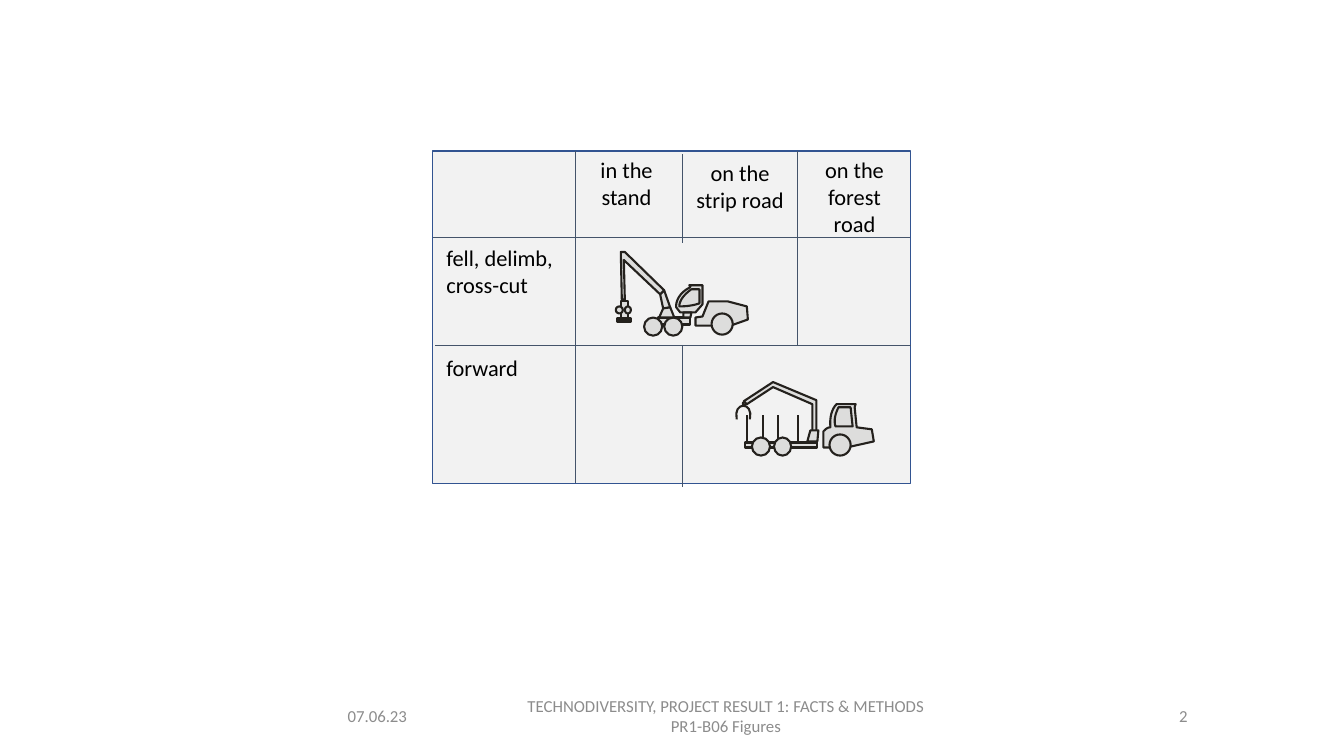
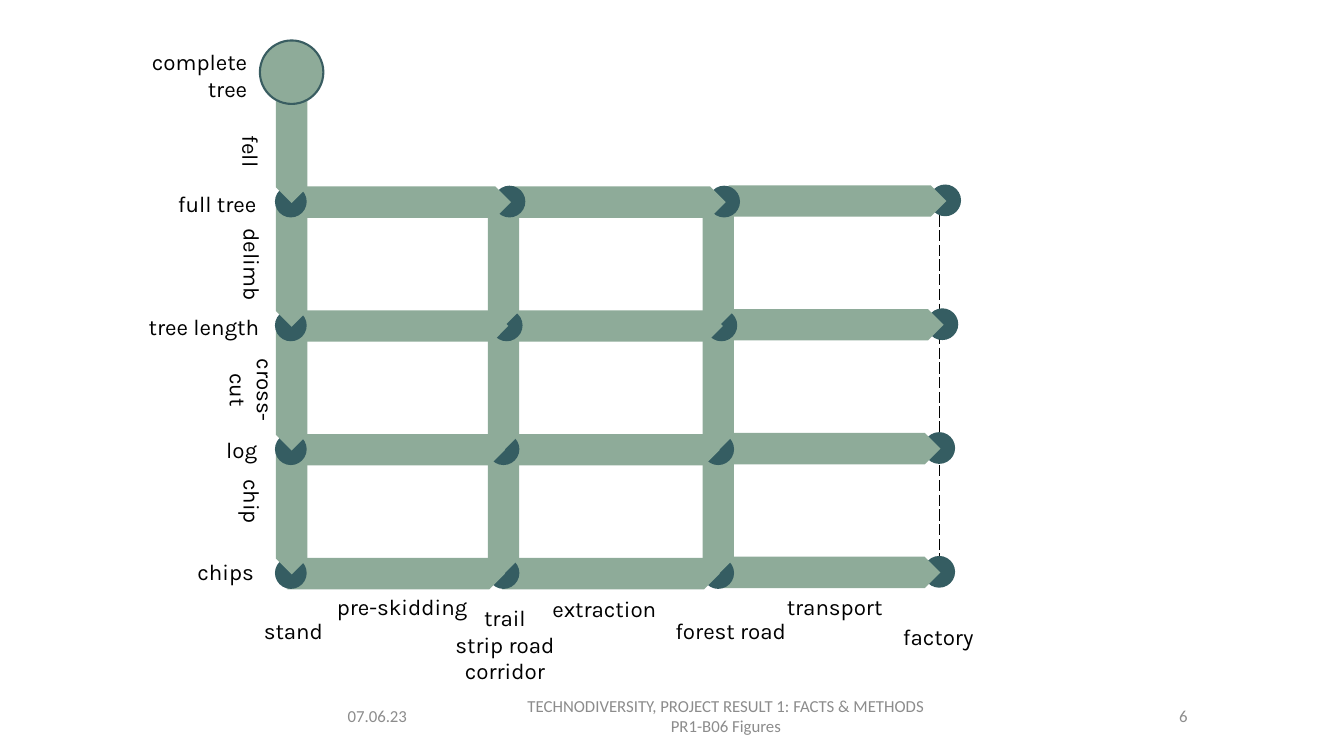
from lxml import etree
from pptx import Presentation
from pptx import util as u
from pptx.dml.color import RGBColor
from pptx.enum import shapes, text
from pptx.oxml.ns import qn

BLACK = RGBColor(0x00, 0x00, 0x00)
FOOTER_GREY = RGBColor(0x8C, 0x8C, 0x8C)
PANEL = RGBColor(0xF2, 0xF2, 0xF2)
PANEL_EDGE = RGBColor(0x32, 0x54, 0x91)
RULE = RGBColor(0x44, 0x54, 0x6A)
MACHINE = RGBColor(0xDD, 0xDD, 0xDC)
MACHINE_EDGE = RGBColor(0x24, 0x21, 0x1D)
SAGE = RGBColor(0x8E, 0xAB, 0x99)
TEAL = RGBColor(0x35, 0x5D, 0x62)
TREE_EDGE = RGBColor(0x39, 0x5D, 0x61)

RECT = shapes.MSO_SHAPE.RECTANGLE
OVAL = shapes.MSO_SHAPE.OVAL
ARROW = shapes.MSO_SHAPE.PENTAGON
STRAIGHT = shapes.MSO_CONNECTOR.STRAIGHT
LEFT, CENTER, RIGHT = text.PP_ALIGN.LEFT, text.PP_ALIGN.CENTER, text.PP_ALIGN.RIGHT


def write(slide, words, left, top, width, height, font="Calibri", size=16,
          color=BLACK, align=CENTER, anchor=text.MSO_ANCHOR.TOP, rotation=0):
    box = slide.shapes.add_textbox(u.Cm(left), u.Cm(top), u.Cm(width), u.Cm(height))
    box.rotation = rotation
    frame = box.text_frame
    frame.word_wrap = True
    frame.vertical_anchor = anchor
    frame.text = words
    for paragraph in frame.paragraphs:
        paragraph.alignment = align
        paragraph.font.name = font
        paragraph.font.size = u.Pt(size)
        paragraph.font.color.rgb = color


def paint(part, fill=None, line=None, weight=1.5):
    if fill:
        part.fill.solid()
        part.fill.fore_color.rgb = fill
    elif hasattr(part, "fill"):
        part.fill.background()
    if line:
        part.line.color.rgb = line
        part.line.width = u.Pt(weight)
    else:
        part.line.fill.background()
    etree.SubElement(part._element.spPr, qn("a:effectLst"))


deck = Presentation()
deck.slide_width, deck.slide_height = u.Cm(33.87), u.Cm(19.05)
blank = deck.slide_layouts[6]
matrix, network = deck.slides.add_slide(blank), deck.slides.add_slide(blank)

for slide, number in ((matrix, "2"), (network, "6")):
    for words, left, width, align in (
        ("07.06.23", 8.51, 3.4, LEFT),
        ("TECHNODIVERSITY, PROJECT RESULT 1: FACTS & METHODS\nPR1-B06 Figures", 12.34, 11.91, CENTER),
        (number, 24.82, 5.36, RIGHT),
    ):
        write(slide, words, left, 17.53, width, 1.02, size=12, color=FOOTER_GREY,
              align=align, anchor=text.MSO_ANCHOR.MIDDLE)

panel = matrix.shapes.add_shape(RECT, u.Cm(10.9), u.Cm(3.81), u.Cm(12.04), u.Cm(8.38))
paint(panel, PANEL, PANEL_EDGE, 1)
for ends in (
    (10.92, 5.99, 22.94, 5.99),
    (10.97, 8.69, 22.96, 8.69),
    (14.5, 3.81, 14.5, 12.17),
    (20.09, 3.81, 20.09, 8.69),
    (17.2, 3.89, 17.2, 6.12),
    (17.2, 8.69, 17.2, 12.27),
):
    paint(matrix.shapes.add_connector(STRAIGHT, *map(u.Cm, ends)), line=RULE, weight=0.5)

for words, left, top, width, height, align in (
    ("in the stand", 14.38, 3.81, 2.82, 1.62, CENTER),
    ("on the strip road", 17.2, 3.89, 2.9, 1.62, CENTER),
    ("on the forest road", 20.14, 3.81, 2.79, 2.31, CENTER),
    ("fell, delimb, cross-cut", 11, 6.02, 3.33, 1.62, LEFT),
    ("forward", 11, 8.81, 3.33, 0.94, LEFT),
):
    write(matrix, words, left, top, width, height, align=align)

harvester = [
    (OVAL, None, (18, 97, 2, 2)),
    ("closed", MACHINE, [(85, 85), (84, 83), (97, 83), (97, 102), (90, 110), (75, 110),
                         (71, 105), (70, 100, 74, 90, 85, 85)]),
    ("closed", MACHINE, [(86, 87), (79, 92, 74, 98, 74, 104), (82, 104, 88, 103, 94, 101), (94, 87)]),
    (RECT, MACHINE, (53, 115, 32, 7)),
    (RECT, MACHINE, (16, 99, 7, 17)),
    (OVAL, MACHINE, (11, 104, 7, 7)),
    (OVAL, MACHINE, (20, 104, 6, 7)),
    (RECT, MACHINE, (12, 116, 14, 3)),
    (OVAL, MACHINE, (39, 115, 18, 18)),
    (OVAL, MACHINE, (59, 115, 18, 18)),
    ("closed", MACHINE, [(90, 115), (90, 123), (125, 123), (142, 117), (141, 104),
                         (122, 99), (103, 99), (97, 114)]),
    (OVAL, MACHINE, (106, 111, 21, 21)),
    ("closed", MACHINE, [(55, 92), (58, 106), (65, 105), (59, 88)]),
    ("closed", MACHINE, [(69, 115), (65, 105), (58, 106), (54, 115)]),
    ("closed", MACHINE, [(78, 110), (86, 110), (85, 115), (78, 115)]),
    ("closed", MACHINE, [(59, 88), (20, 50), (16, 50), (17, 97), (20, 97), (19, 58), (55, 92)]),
]
forwarder = [
    (OVAL, MACHINE, (37, 99, 3, 3)),
    ("line", None, (57, 112, 57, 138)),
    ("line", None, (72, 112, 72, 138)),
    (RECT, MACHINE, (39, 139, 72, 5)),
    (OVAL, MACHINE, (46, 134, 18, 18)),
    (OVAL, MACHINE, (68, 134, 17, 18)),
    ("line", None, (41, 112, 41, 138)),
    ("line", None, (92, 112, 92, 138)),
    ("closed", MACHINE, [(110, 131), (110, 97), (67, 79), (38, 98), (41, 101), (67, 84),
                         (106, 101), (106, 131)]),
    ("closed", MACHINE, [(104, 127), (101, 138), (111, 138), (112, 127)]),
    ("open", None, [(31, 116), (27, 98, 48, 98, 44, 116)]),
    ("closed", MACHINE, [(140, 144), (167, 138), (165, 126), (150, 124), (148, 104), (149, 101),
                         (130, 101), (125, 106, 123, 115, 124, 124),
                         (121, 124, 119, 126, 117, 128), (117, 144)]),
    (OVAL, MACHINE, (123, 131, 21, 21)),
    ("closed", MACHINE, [(144, 104), (146, 123), (129, 123), (127, 117, 129, 110, 132, 104)]),
]
grid = u.Cm(2.54) / 100
for machine, left, top in ((harvester, 15.24, 5.08), (forwarder, 17.78, 7.62)):
    group = matrix.shapes.add_group_shape().shapes
    left, top = u.Cm(left), u.Cm(top)
    for kind, fill, data in machine:
        if kind in ("closed", "open"):
            outline = [data[0]]
            for node in data[1:]:
                if len(node) == 2:
                    outline.append(node)
                    continue
                curve = (outline[-1], node[:2], node[2:4], node[4:])
                for t in (k / 8 for k in range(1, 9)):
                    weights = ((1 - t) ** 3, 3 * t * (1 - t) ** 2, 3 * t * t * (1 - t), t ** 3)
                    outline.append(tuple(sum(w * p[axis] for w, p in zip(weights, curve))
                                         for axis in (0, 1)))
            points = [(round(x * grid), round(y * grid)) for x, y in outline]
            builder = group.build_freeform(*points[0])
            builder.add_line_segments(points[1:], close=kind == "closed")
            part = builder.convert_to_shape(left, top)
        else:
            a, b, c, d = (round(value * grid) for value in data)
            if kind == "line":
                part = group.add_connector(STRAIGHT, left + a, top + b, left + c, top + d)
            else:
                part = group.add_shape(kind, left + a, top + b, c, d)
        paint(part, fill, MACHINE_EDGE)

raster = network.shapes.add_table(4, 3, u.Cm(7.24), u.Cm(1.93), u.Cm(16.44), u.Cm(12.57)).table
raster.first_row = raster.horz_banding = False
for row in range(4):
    for column in range(3):
        cell = raster.cell(row, column)
        sides = "LRTB" if row else "LB" if column == 0 else "B"
        for side in sides:
            border = etree.SubElement(cell._tc.get_or_add_tcPr(), qn("a:ln" + side), w="12700")
            ink = etree.SubElement(border, qn("a:solidFill"))
            etree.SubElement(ink, qn("a:srgbClr"), val=str(BLACK))
            etree.SubElement(border, qn("a:prstDash"), val="dash")
        cell.fill.background()

row_tops = [4.7 + 3.12 * row for row in range(4)]
row_shifts = (0.15, 0.08, 0, 0)
node_lefts = (6.93, 12.29, 17.7, 23.27)
process_lefts = (5.79, 11.13, 16.54)
transfer_lefts = (7.24, 12.65, 18.21)
for column in (3, 2, 1, 0):
    lift = 0.03 if column == 3 else 0
    for row in (3, 2, 1, 0):
        shift = row_shifts[row] if column else 0
        node = network.shapes.add_shape(
            OVAL, u.Cm(node_lefts[column] + shift), u.Cm(row_tops[row] - lift - 0.02),
            u.Cm(0.8), u.Cm(0.8))
        paint(node, TEAL)
        if column == 0 or (row and column < 3):
            process = network.shapes.add_shape(
                ARROW, u.Cm(process_lefts[column]), u.Cm(row_tops[row] - 1.54), u.Cm(3.12), u.Cm(0.79))
            process.rotation = 90
            paint(process, SAGE)
    if column:
        for row in (3, 2, 1, 0):
            transfer = network.shapes.add_shape(
                ARROW, u.Cm(transfer_lefts[column - 1] + row_shifts[row]),
                u.Cm(row_tops[row] - lift), u.Cm(5.49), u.Cm(0.79))
            paint(transfer, SAGE)

tree = network.shapes.add_shape(OVAL, u.Cm(6.55), u.Cm(1.02), u.Cm(1.6), u.Cm(1.6))
paint(tree, SAGE, TREE_EDGE)

for words, left, top, width, height, align, rotation in (
    ("complete tree", 3.3, 1.09, 3.18, 1.62, RIGHT, 0),
    ("full tree", 2.77, 4.67, 3.94, 0.94, RIGHT, 0),
    ("tree length", 3.02, 7.77, 3.76, 0.94, RIGHT, 0),
    ("log", 3.81, 10.87, 2.92, 0.94, RIGHT, 0),
    ("chips", 3.73, 13.94, 2.92, 0.94, RIGHT, 0),
    ("fell", 4.14, 3.35, 4.37, 0.94, CENTER, 90),
    ("delimb", 4.17, 6.2, 4.37, 0.94, CENTER, 90),
    ("cross-cut", 5.13, 9.02, 2.44, 1.62, CENTER, 90),
    ("chip", 5.11, 12.17, 2.49, 0.94, CENTER, 90),
    ("stand", 5.21, 15.42, 4.37, 0.94, CENTER, 0),
    ("trail\nstrip road\ncorridor", 10.54, 15.09, 4.37, 2.31, CENTER, 0),
    ("forest road", 16.23, 15.42, 4.37, 0.94, CENTER, 0),
    ("factory", 21.46, 15.57, 4.37, 0.94, CENTER, 0),
    ("pre-skidding", 7.95, 14.81, 4.37, 0.94, CENTER, 0),
    ("extraction", 12.73, 14.86, 5, 0.94, CENTER, 0),
    ("transport", 18.14, 14.81, 5.79, 0.94, CENTER, 0),
):
    write(network, words, left, top, width, height, font="Karla", align=align, rotation=rotation)

deck.save("out.pptx")
